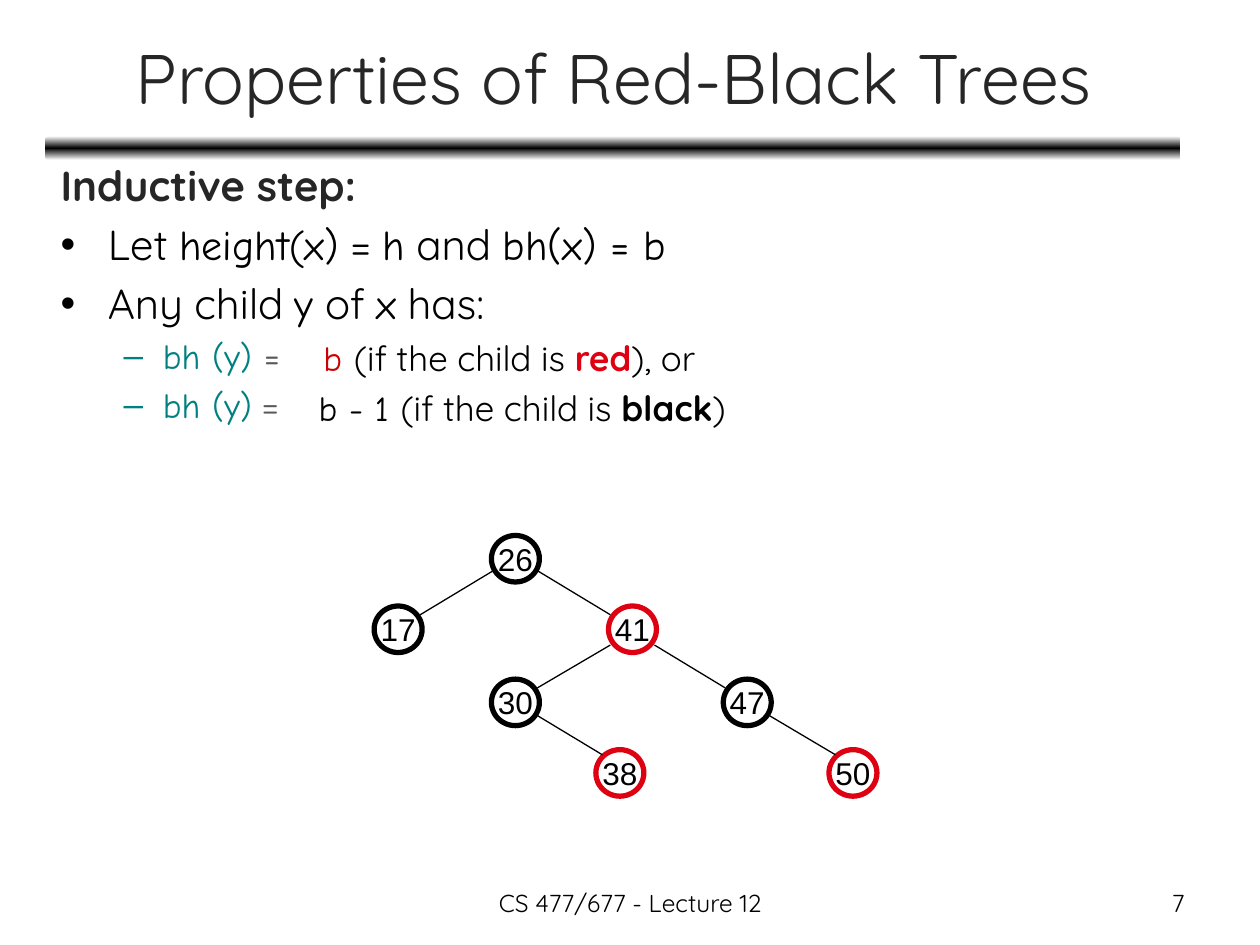
from copy import deepcopy

from lxml.etree import SubElement
from pptx import Presentation
from pptx.dml.color import RGBColor
from pptx.enum.shapes import MSO_CONNECTOR, MSO_SHAPE
from pptx.enum.text import MSO_ANCHOR, MSO_AUTO_SIZE as AutoSize, PP_ALIGN as Align
from pptx.oxml.ns import qn
from pptx.util import Pt

COLOURS = {
    "black": "000000",
    "white": "FFFFFF",
    "heading": "262626",
    "grey": "595959",
    "teal": "008080",
    "red": "DD0111",
    "dark red": "CC0000",
}
SANS, HAND, PLAIN = "Quicksand", "Comic Neue", "Arial"

BODY = [
    (0, 24, [("Inductive step:", SANS, "heading", True)]),
    (0, 24, [
        ("Let ", SANS, "black", False), ("height", HAND, "black", False),
        ("(", SANS, "black", False), ("x)", HAND, "black", False),
        (" = ", SANS, "black", False), ("h", HAND, "black", False),
        (" and ", SANS, "black", False), ("bh(x) = b", HAND, "black", False),
    ]),
    (0, 24, [
        ("Any child ", SANS, "black", False), ("y", HAND, "black", False),
        (" of ", SANS, "black", False), ("x", HAND, "black", False),
        (" has:", SANS, "black", False),
    ]),
    (1, 20, [("bh (y)", HAND, "teal", False), (" =", HAND, "grey", False)]),
    (1, 20, [("bh (y)", HAND, "teal", False), (" =", SANS, "grey", False)]),
]
RED_CASE = [
    ("b ", HAND, "dark red", False),
    ("(if the child is ", SANS, "black", False),
    ("red", SANS, "red", True),
    ("), or", SANS, "black", False),
]
BLACK_CASE = [
    ("b - 1 ", HAND, "black", False),
    ("(if the child is ", SANS, "black", False),
    ("black", SANS, "black", True),
    (")", SANS, "black", False),
]

NODE_WIDTH, NODE_HEIGHT = 27.4, 26.6
ROWS = [319.3, 359.6, 401.4, 441.7]
NODES = {
    26: (294.5, 0, "black"),
    17: (227.5, 1, "black"),
    41: (361.4, 1, "red"),
    30: (294.5, 2, "black"),
    47: (427, 2, "black"),
    38: (354.2, 3, "red"),
    50: (487.4, 3, "red"),
}
EDGES = [(26, 17), (26, 41), (41, 30), (41, 47), (30, 38), (47, 50)]
EXIT_DROPS = [6.8, 9, 7.5]
ENTRY_INSETS = {1: (12.6, 8.3), 2: (12.6, 8.3), 3: (10, 10.4)}


def rgb(name):
    """Return the palette colour with this name."""
    return RGBColor.from_string(COLOURS[name])


def place(shape, left, top, width, height):
    """Move and size a shape in points."""
    shape.left, shape.top = Pt(left), Pt(top)
    shape.width, shape.height = Pt(width), Pt(height)


def style(para, size, font, colour="black", align=None):
    """Format a paragraph whose text is uniform."""
    para.font.size, para.font.name = Pt(size), font
    para.font.color.rgb = rgb(colour)
    para.alignment = align


def add_spans(para, size, spans):
    """Fill a paragraph with differently formatted spans."""
    para.font.size = Pt(size)
    for text, font, colour, bold in spans:
        span = para.add_run()
        span.text = text
        span.font.name, span.font.bold = font, bold
        span.font.color.rgb = rgb(colour)


def add_title(page):
    """Fill the title placeholder."""
    title = page.shapes.title
    place(title, 26.6, 7.9, 648, 71.3)
    title.text_frame.text = "Properties of Red-Black Trees"
    title.text_frame.auto_size = AutoSize.NONE
    title.text_frame.vertical_anchor = MSO_ANCHOR.MIDDLE
    style(title.text_frame.paragraphs[0], 40, SANS, "heading", Align.CENTER)


def add_rule(page):
    """Draw the shaded bar under the title, behind everything else."""
    rule = page.shapes.add_shape(
        MSO_SHAPE.ROUNDED_RECTANGLE, Pt(25.9), Pt(77.8), Pt(648.7), Pt(13.7))
    rule.shadow.inherit = False
    rule.line.fill.background()
    rule.fill.gradient()
    rule.fill.gradient_angle = 90
    stops = rule._element.spPr.find(qn("a:gradFill")).find(qn("a:gsLst"))
    stops.insert(1, deepcopy(stops[0]))
    shades = [(0, "white"), (0.5, "black"), (1, "white")]
    for stop, (position, colour) in zip(rule.fill.gradient_stops, shades):
        stop.position = position
        stop.color.rgb = rgb(colour)
    page.shapes.title._element.addprevious(rule._element)


def add_body(page):
    """Fill the body placeholder with the bulleted proof step."""
    body = page.placeholders[1]
    place(body, 27.4, 87.8, 655.9, 457.9)
    frame = body.text_frame
    frame.auto_size = AutoSize.NONE
    for index, (level, size, spans) in enumerate(BODY):
        para = frame.add_paragraph() if index else frame.paragraphs[0]
        para.level = level
        add_spans(para, size, spans)
        if index == 0:
            properties = para._p.get_or_add_pPr()
            bullet = SubElement(properties, qn("a:buNone"))
            properties.insert(0, bullet)


def add_case(page, left, top, width, spans):
    """Add one unwrapped line that completes an equation."""
    box = page.shapes.add_textbox(Pt(left), Pt(top), Pt(width), Pt(31.5))
    box.text_frame.word_wrap = False
    box.text_frame.auto_size = AutoSize.SHAPE_TO_FIT_TEXT
    add_spans(box.text_frame.paragraphs[0], 20, spans)


def add_footer(page, left, width, text, align):
    """Add a small text box at the foot of the page."""
    box = page.shapes.add_textbox(Pt(left), Pt(504), Pt(width), Pt(25.2))
    box.text_frame.word_wrap = True
    box.text_frame.text = text
    style(box.text_frame.paragraphs[0], 14, SANS, align=align)


def add_node(tree, key):
    """Draw one ringed tree node centred on its grid point."""
    centre, row, colour = NODES[key]
    node = tree.shapes.add_shape(
        MSO_SHAPE.OVAL, Pt(centre - NODE_WIDTH / 2),
        Pt(ROWS[row] - NODE_HEIGHT / 2), Pt(NODE_WIDTH), Pt(NODE_HEIGHT))
    node.shadow.inherit = False
    node.fill.background()
    node.line.color.rgb = rgb(colour)
    node.line.width = Pt(3)
    frame = node.text_frame
    frame.text = str(key)
    frame.word_wrap = False
    frame.vertical_anchor = MSO_ANCHOR.MIDDLE
    style(frame.paragraphs[0], 18, PLAIN, align=Align.CENTER)


def add_edge(tree, parent, child):
    """Join the rims of a parent and a child node."""
    start, upper, _ = NODES[parent]
    end, lower, _ = NODES[child]
    side = 1 if end > start else -1
    inset, rise = ENTRY_INSETS[lower]
    edge = tree.shapes.add_connector(
        MSO_CONNECTOR.STRAIGHT,
        Pt(start + side * 12.6), Pt(ROWS[upper] + EXIT_DROPS[upper]),
        Pt(end - side * inset), Pt(ROWS[lower] - rise))
    edge.line.color.rgb = rgb("black")
    edge.line.width = Pt(0.75)
    SubElement(edge._element.spPr, qn("a:effectLst"))


def main():
    """Build and save the slide."""
    deck = Presentation()
    deck.slide_width, deck.slide_height = Pt(720), Pt(540)
    page = deck.slides.add_slide(deck.slide_layouts[1])
    add_title(page)
    add_rule(page)
    add_body(page)
    tree = page.shapes.add_group_shape()
    for key in NODES:
        add_node(tree, key)
    for parent, child in EDGES:
        add_edge(tree, parent, child)
    add_case(page, 177.8, 188.6, 234.7, RED_CASE)
    add_case(page, 175, 217.4, 255.6, BLACK_CASE)
    add_footer(page, 516.2, 167.8, "7", Align.RIGHT)
    add_footer(page, 246.2, 228.2, "CS 477/677 - Lecture 12", Align.CENTER)
    deck.save("out.pptx")


if __name__ == "__main__":
    main()
